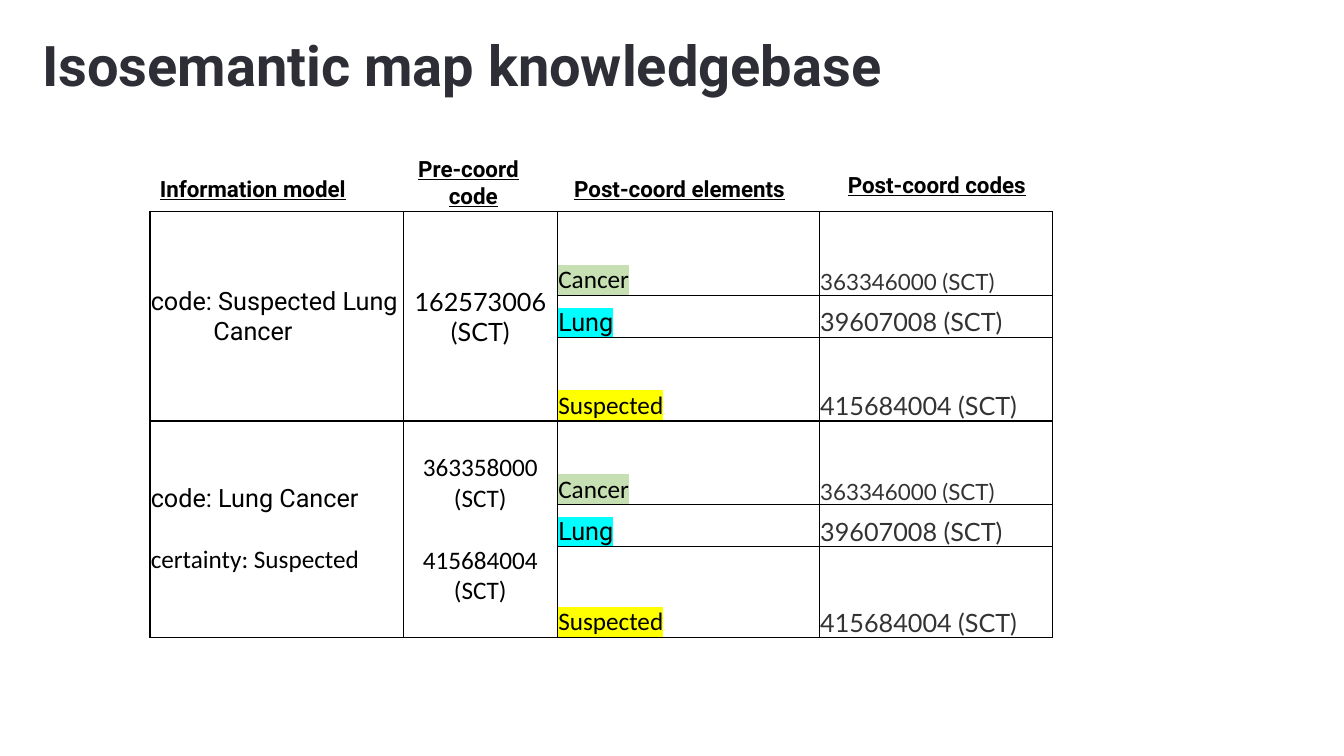
from pptx import Presentation
from pptx.dml.color import RGBColor
from pptx.enum.text import MSO_ANCHOR, PP_ALIGN
from pptx.oxml.ns import qn
from pptx.util import Cm, Pt
from lxml import etree

LEFT, CENTER = PP_ALIGN.LEFT, PP_ALIGN.CENTER
TOP, MIDDLE, BOTTOM = MSO_ANCHOR.TOP, MSO_ANCHOR.MIDDLE, MSO_ANCHOR.BOTTOM
BLACK, GREY, TITLE_COLOR = "000000", "333333", "2E2E36"
GAP = 22  # points, about one line

# Content
TITLE = "Isosemantic map knowledgebase"

# left, top, width, height (cm), then (text, alignment) lines
HEADERS = [
    (3.78, 4.29, 6.2, 0.94, [("Information model", LEFT)]),
    (10.29, 3.78, 3.28, 1.63, [("Pre-coord", LEFT), ("code", CENTER)]),
    (14.22, 4.29, 6.65, 0.94, [("Post-coord elements", LEFT)]),
    (20.88, 4.19, 5.46, 0.94, [("Post-coord codes", CENTER)]),
]

# Each line: text and its format
MODELS = [
    [("code: Suspected Lung", {"font": "Roboto"}),
     ("Cancer", {"font": "Roboto", "indent": 1.58})],
    [("code: Lung Cancer", {"font": "Roboto"}),
     ("certainty: Suspected", {"font": "Calibri", "before": GAP})],
]
PRE_CODES = [
    [("162573006", {"font": "Lato"}), ("(SCT)", {"font": "Lato"})],
    [("363358000", {"font": "Calibri"}), ("(SCT)", {"font": "Calibri"}),
     ("415684004", {"font": "Calibri", "before": GAP}),
     ("(SCT)", {"font": "Calibri"})],
]
# element, font, highlight, code, code size
ELEMENTS = [
    ("Cancer", "Calibri", "C6E0B4", "363346000 (SCT)", 16),
    ("Lung", "Roboto", "00FFFF", "39607008 (SCT)", 18),
    ("Suspected", "Calibri", "FFFF00", "415684004 (SCT)", 18),
]

TABLE_LEFT, TABLE_TOP = 3.78, 5.33
COL_WIDTHS = [6.38, 3.89, 6.6, 5.87]
ROW_HEIGHTS = [2.11, 1.06, 2.11, 2.11, 1.06, 2.29]


def rgb(value):
    return RGBColor.from_string(value)


def write_line(p, text, font, size=18, color=BLACK, align=LEFT, bold=None,
               underline=None, highlight=None, indent=0, before=0):
    p.text = text
    p.alignment = align
    if before:
        p.space_before = Pt(before)
    if indent:
        p._p.get_or_add_pPr().set("marL", str(Cm(indent)))
    r = p.runs[0]
    r.font.size, r.font.name = Pt(size), font
    r.font.bold, r.font.underline = bold, underline
    r.font.color.rgb = rgb(color)
    if highlight:
        mark = etree.Element(qn("a:highlight"))
        etree.SubElement(mark, qn("a:srgbClr"), val=highlight)
        r._r.rPr.find(qn("a:solidFill")).addnext(mark)


def write_lines(tf, lines, **common):
    for i, (text, style) in enumerate(lines):
        p = tf.paragraphs[0] if i == 0 else tf.add_paragraph()
        write_line(p, text, **common, **style)


def add_text(slide, box, lines, **common):
    tf = slide.shapes.add_textbox(*map(Cm, box)).text_frame
    tf.word_wrap = True
    tf.vertical_anchor = TOP
    write_lines(tf, lines, **common)
    return tf


def style_cell(cell):
    cell.margin_left = cell.margin_right = cell.margin_top = Cm(0.02)
    cell.margin_bottom = 0
    cell.fill.background()
    tc_pr = cell._tc.get_or_add_tcPr()
    for i, side in enumerate(("lnL", "lnR", "lnT", "lnB")):
        ln = etree.Element(qn("a:" + side), w=str(Pt(1)))
        fill = etree.SubElement(ln, qn("a:solidFill"))
        etree.SubElement(fill, qn("a:srgbClr"), val=BLACK)
        tc_pr.insert(i, ln)


def fill_cell(cell, anchor, lines, **common):
    cell.vertical_anchor = anchor
    write_lines(cell.text_frame, lines, **common)


prs = Presentation()
prs.slide_width, prs.slide_height = Cm(33.87), Cm(19.05)
slide = prs.slides.add_slide(prs.slide_layouts[6])

# Title
tf = add_text(slide, (0.81, 0.71, 24.66, 2.62), [(TITLE, {})],
              font="Roboto", size=40, color=TITLE_COLOR, bold=True)
tf.margin_top = tf.margin_bottom = Cm(0.25)
tf.paragraphs[0].line_spacing = 0.9

# Table grid
table = slide.shapes.add_table(
    len(ROW_HEIGHTS), len(COL_WIDTHS), Cm(TABLE_LEFT), Cm(TABLE_TOP),
    Cm(sum(COL_WIDTHS)), Cm(sum(ROW_HEIGHTS))).table
table.first_row = table.horz_banding = False
for col, width in zip(table.columns, COL_WIDTHS):
    col.width = Cm(width)
for row, height in zip(table.rows, ROW_HEIGHTS):
    row.height = Cm(height)
for cell in table.iter_cells():
    style_cell(cell)

# Table groups: two merged cells beside three element rows
for group, (model, pre_code) in enumerate(zip(MODELS, PRE_CODES)):
    first = group * len(ELEMENTS)
    last = first + len(ELEMENTS) - 1
    for c, lines, align in ((0, model, LEFT), (1, pre_code, CENTER)):
        table.cell(first, c).merge(table.cell(last, c))
        fill_cell(table.cell(first, c), MIDDLE, lines, align=align)
    for r, (name, font, mark, code, size) in enumerate(ELEMENTS, first):
        fill_cell(table.cell(r, 2), BOTTOM, [(name, {})],
                  font=font, highlight=mark)
        fill_cell(table.cell(r, 3), BOTTOM, [(code, {})],
                  font="Lato", size=size, color=GREY)

# Column headers
for *box, lines in HEADERS:
    add_text(slide, box, [(text, {"align": align}) for text, align in lines],
             font="Roboto", size=16, bold=True, underline=True)

prs.save("out.pptx")
